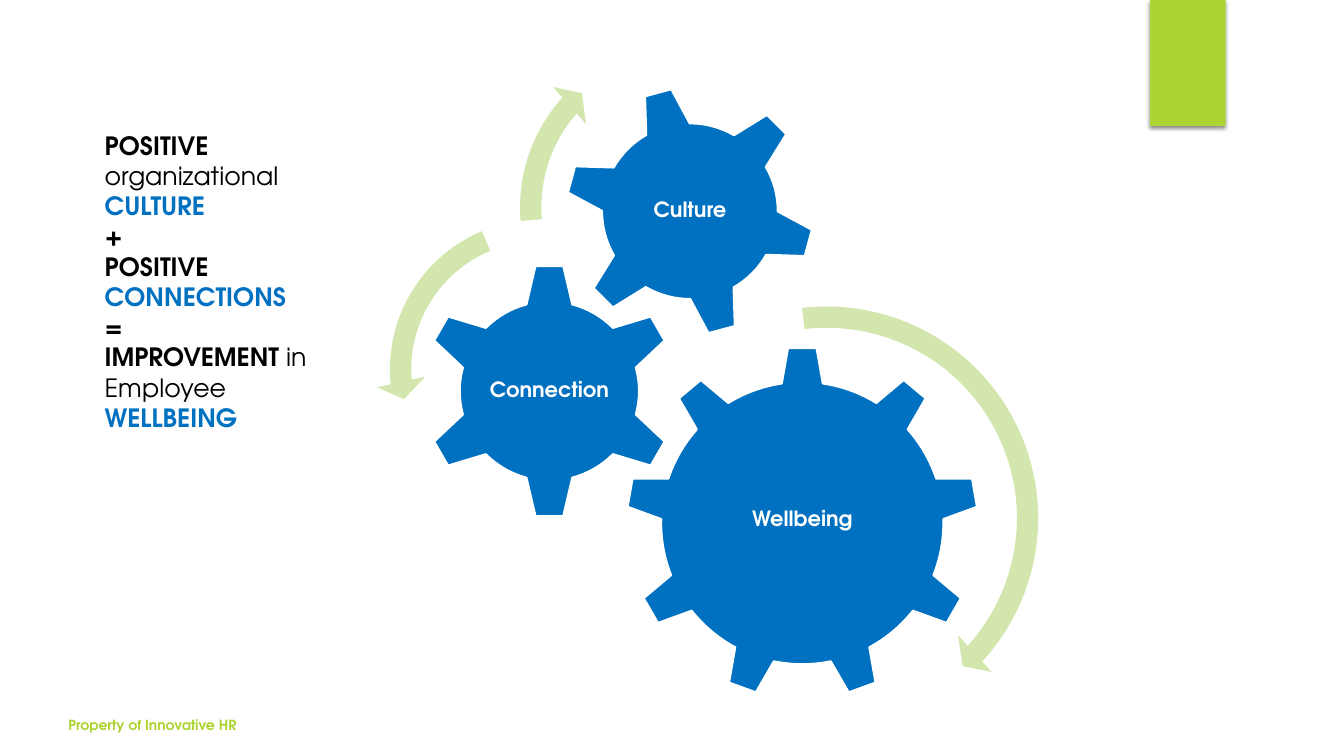
from lxml import etree
from pptx import Presentation
from pptx.dml.color import RGBColor
from pptx.enum import shapes, text
from pptx.oxml import ns
from pptx.util import Pt

BLUE = RGBColor(0x00, 0x70, 0xC0)
LIME = RGBColor(0xAC, 0xD4, 0x33)
PALE_GREEN = RGBColor(0xD2, 0xE6, 0xAE)
BLACK = RGBColor(0, 0, 0)
WHITE = RGBColor(255, 255, 255)
FONT = "TeX Gyre Adventor"
KIND = shapes.MSO_SHAPE

# label, gear preset, (left, top, side), rotation, label insets (side, top)
GEARS = [
    ("Wellbeing", KIND.GEAR_9, (447.1, 247.7, 252), 0, (50.4, 59)),
    ("Connection", KIND.GEAR_6, (301, 187.9, 182.9), 0, (46, 46)),
    ("Culture", KIND.GEAR_6, (403.2, 61.2, 179.3), 345, (39.6, 39.6)),
]
# preset, (left, top, side), adjustments
TURNS = [
    (KIND.CIRCULAR_ARROW, (429.1, 208.8, 322.6),
     (0.047, 2.99, 25.449, 158.008, 0.055)),
    (KIND.LEFT_CIRCULAR_ARROW, (268.6, 146.9, 234),
     (0.065, 4.3, 104.891, 148.378, 0.075)),
    (KIND.CIRCULAR_ARROW, (361.4, 21.6, 252.7),
     (0.06, 3.941, 133.138, 105.082, 0.07)),
]
# one list per paragraph of (words, colour, bold)
MESSAGE = [
    [("POSITIVE ", BLACK, True), ("organizational ", BLACK, False),
     ("CULTURE", BLUE, True)],
    [("+", BLACK, True)],
    [("POSITIVE", BLACK, True)],
    [("CONNECTIONS", BLUE, True)],
    [("=", BLACK, True)],
    [("IMPROVEMENT ", BLACK, True), ("in Employee", BLACK, False)],
    [("WELLBEING", BLUE, True)],
]


def add_solid(slide, kind, box, fill):
    solid = slide.shapes.add_shape(kind, *map(Pt, box))
    solid.shadow.inherit = False
    solid.fill.solid()
    solid.fill.fore_color.rgb = fill
    solid.line.fill.background()
    return solid


def add_words(slide, box, paragraphs, size):
    """Add a wrapping text box from lists of (words, colour, bold)."""
    words_box = slide.shapes.add_textbox(*map(Pt, box))
    frame = words_box.text_frame
    frame.word_wrap = True
    for index, pieces in enumerate(paragraphs):
        paragraph = frame.add_paragraph() if index else frame.paragraphs[0]
        for words, colour, bold in pieces:
            run = paragraph.add_run()
            run.text = words
            run.font.name = FONT
            run.font.size = Pt(size)
            run.font.bold = bold
            run.font.color.rgb = colour
    return frame


def add_corner_tab(slide, box):
    tab = add_solid(slide, KIND.RECTANGLE, box, LIME)
    effects = tab._element.spPr.find(ns.qn("a:effectLst"))
    shadow = etree.SubElement(effects, ns.qn("a:outerShdw"), blurRad=str(Pt(3)),
                              dist=str(Pt(2)), dir="5400000", rotWithShape="0")
    colour = etree.SubElement(shadow, ns.qn("a:srgbClr"), val="000000")
    etree.SubElement(colour, ns.qn("a:alpha"), val="45000")


def add_gear(slide, label, kind, place, rotation, insets):
    left, top, side = place
    gear = add_solid(slide, kind, (left, top, side, side), BLUE)
    gear.rotation = rotation
    gear.line.color.rgb = WHITE
    gear.line.width = Pt(1.5)

    inset_x, inset_y = insets
    # The nine-tooth gear's label area sits slightly above its centre.
    height = 129.6 if kind == KIND.GEAR_9 else side - 2 * inset_y
    box = (left + inset_x, top + inset_y, side - 2 * inset_x, height)
    frame = add_words(slide, box, [[(label, WHITE, True)]], 15)
    frame.vertical_anchor = text.MSO_ANCHOR.MIDDLE
    frame.margin_left = frame.margin_right = Pt(1.5)
    frame.margin_top = frame.margin_bottom = Pt(1.5)
    frame.paragraphs[0].alignment = text.PP_ALIGN.CENTER
    frame.paragraphs[0].line_spacing = 0.9


def add_turn(slide, kind, place, adjustments):
    """Add the curved arrow that shows which way a gear turns."""
    left, top, side = place
    turn = add_solid(slide, kind, (left, top, side, side), PALE_GREEN)
    for index, value in enumerate(adjustments):
        turn.adjustments[index] = value


def add_message(slide, box):
    frame = add_words(slide, box, MESSAGE, 18)
    frame.auto_size = text.MSO_AUTO_SIZE.SHAPE_TO_FIT_TEXT


def add_footer(slide, box):
    owner = [[("Property of Innovative HR", LIME, True)]]
    frame = add_words(slide, box, owner, 10)
    frame.vertical_anchor = text.MSO_ANCHOR.BOTTOM


def main():
    deck = Presentation()
    deck.slide_width, deck.slide_height = Pt(960), Pt(540)
    slide = deck.slides.add_slide(deck.slide_layouts[6])
    add_corner_tab(slide, (821.5, 0, 54, 90))
    for gear in GEARS:
        add_gear(slide, *gear)
    for turn in TURNS:
        add_turn(slide, *turn)
    add_message(slide, (67.7, 89.3, 200.2, 225.4))
    add_footer(slide, (41.8, 503.3, 303.8, 23.8))
    deck.save("out.pptx")


if __name__ == "__main__":
    main()
